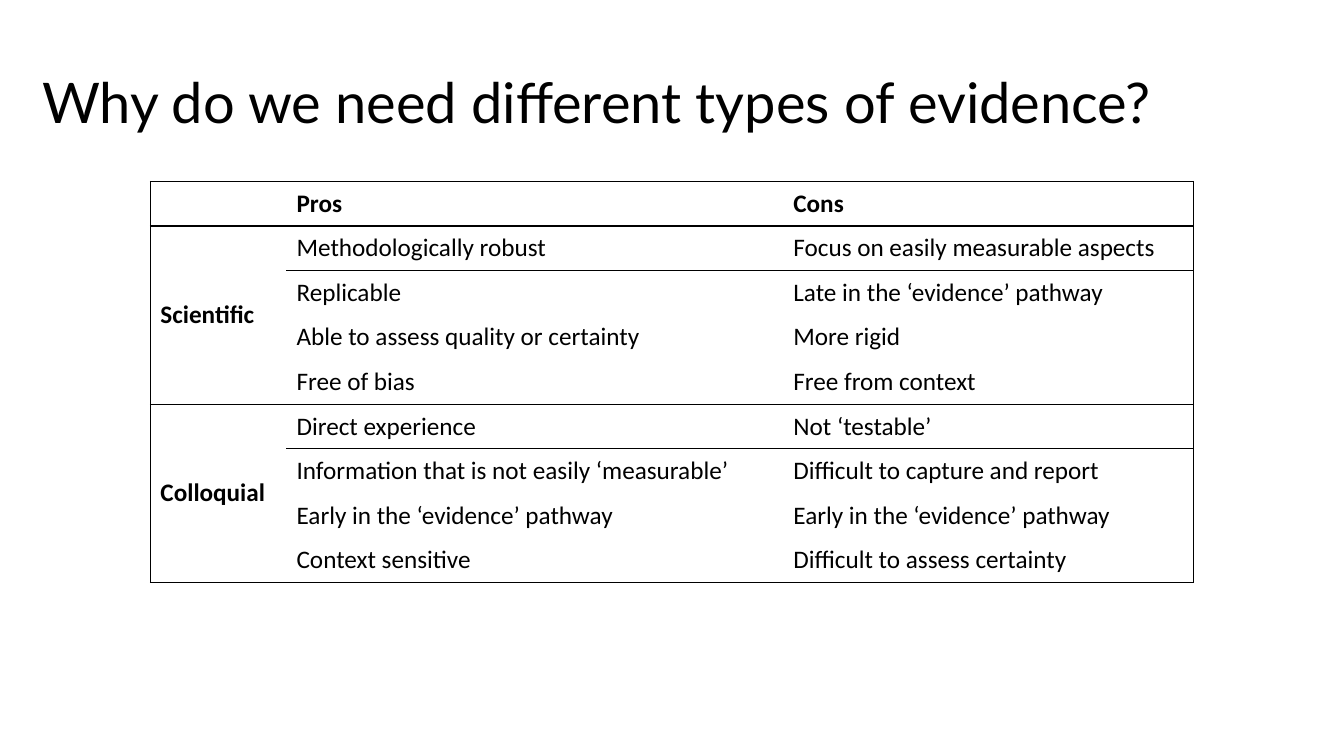
from pptx import Presentation, util as u
from pptx.dml.color import RGBColor
from pptx.enum import text
from pptx.oxml.ns import qn
from lxml import etree

TITLE = "Why do we need different types of evidence?"
HEADS = ["", "Pros", "Cons"]
GROUPS = {
    "Scientific": [
        ("Methodologically robust", "Focus on easily measurable aspects"),
        ("Replicable", "Late in the ‘evidence’ pathway"),
        ("Able to assess quality or certainty", "More rigid"),
        ("Free of bias", "Free from context"),
    ],
    "Colloquial": [
        ("Direct experience", "Not ‘testable’"),
        ("Information that is not easily ‘measurable’", "Difficult to capture and report"),
        ("Early in the ‘evidence’ pathway", "Early in the ‘evidence’ pathway"),
        ("Context sensitive", "Difficult to assess certainty"),
    ],
}
COLORS = {"ink": "000000"}
WIDTHS = [3.43, 12.52, 10.34]
ROW = 1.123


def style(para, font, size, bold=False):
    para.font.name, para.font.size, para.font.bold = font, u.Pt(size), bold
    para.font.color.rgb = RGBColor.from_string(COLORS["ink"])


def border(cell, sides):
    """Rule the sides named in sides (of L, R, T, B) and clear the others."""
    props = cell._tc.get_or_add_tcPr()
    for spot, side in enumerate("LRTB"):
        line = etree.Element(qn(f"a:ln{side}"), w=str(u.Pt(1)))
        if side in sides:
            fill = etree.SubElement(line, qn("a:solidFill"))
            etree.SubElement(fill, qn("a:srgbClr"), val=COLORS["ink"])
        else:
            etree.SubElement(line, qn("a:noFill"))
        props.insert(spot, line)


def add_title(slide):
    box = slide.shapes.add_textbox(u.Cm(0.81), u.Cm(0.41), u.Cm(32.23), u.Cm(4.47))
    frame = box.text_frame
    frame.word_wrap = True
    frame.vertical_anchor = text.MSO_ANCHOR.MIDDLE
    para = frame.paragraphs[0]
    para.text = TITLE
    para.line_spacing = 0.9
    style(para, "Lato", 40)


def add_grid(slide):
    rows, starts = [HEADS], []
    for name, pairs in GROUPS.items():
        starts.append(len(rows))
        rows += [[name if i == 0 else "", *pair] for i, pair in enumerate(pairs)]
    count = len(rows)
    full = {0, count, *starts}
    inner = full | {start + 1 for start in starts}

    frame = slide.shapes.add_table(count, len(WIDTHS), u.Cm(3.79), u.Cm(4.57),
                                   u.Cm(sum(WIDTHS)), u.Cm(ROW * count))
    table = frame.table
    table.first_row = table.horz_banding = False
    for col, width in zip(table.columns, WIDTHS):
        col.width = u.Cm(width)
    for row in table.rows:
        row.height = u.Cm(ROW)
    for start, pairs in zip(starts, GROUPS.values()):
        table.cell(start, 0).merge(table.cell(start + len(pairs) - 1, 0))

    for r, row in enumerate(rows):
        for c, words in enumerate(row):
            cell = table.cell(r, c)
            cell.fill.background()
            cell.vertical_anchor = text.MSO_ANCHOR.MIDDLE
            para = cell.text_frame.paragraphs[0]
            para.text = words
            style(para, "Calibri", 18, r == 0 or c == 0)
            edges = inner if c else full
            end = r + (cell.span_height if cell.is_merge_origin else 1)
            rules = {"L": c == 0, "R": c == len(WIDTHS) - 1,
                     "T": r in edges, "B": end in edges}
            border(cell, [side for side, on in rules.items() if on])


def main():
    deck = Presentation()
    deck.slide_width, deck.slide_height = u.Cm(33.87), u.Cm(19.05)
    slide = deck.slides.add_slide(deck.slide_layouts[6])
    add_title(slide)
    add_grid(slide)
    deck.save("out.pptx")


if __name__ == "__main__":
    main()
